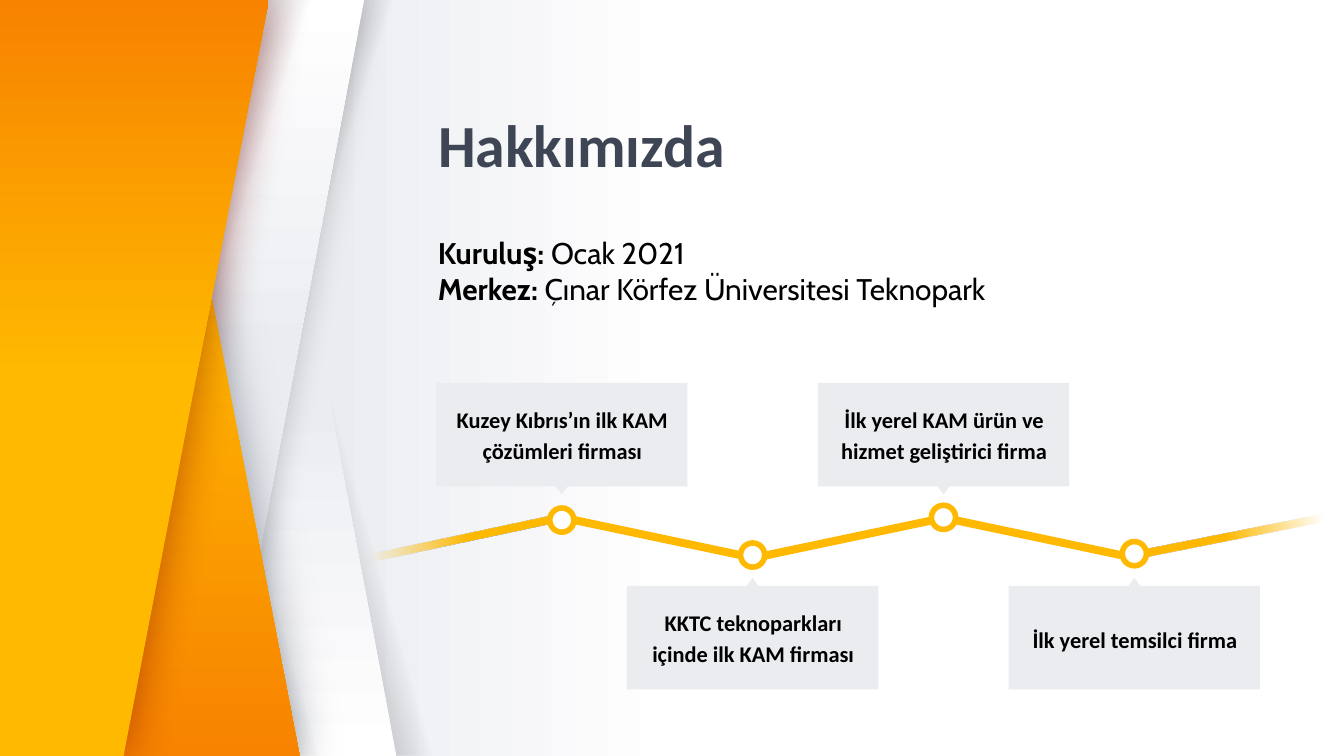
from lxml.etree import SubElement
from pptx import Presentation
from pptx.dml.color import RGBColor
from pptx.enum.shapes import MSO_SHAPE
from pptx.enum.text import MSO_ANCHOR, PP_ALIGN
from pptx.oxml.ns import qn
from pptx.util import Inches, Pt

WHITE = RGBColor(0xFF, 0xFF, 0xFF)
BLACK = RGBColor(0x00, 0x00, 0x00)
MIST = RGBColor(0xEA, 0xEC, 0xF0)
SLATE = RGBColor(0x3E, 0x46, 0x55)
CHARCOAL = RGBColor(0x27, 0x25, 0x2C)
MAROON = RGBColor(0x7E, 0x08, 0x08)
AMBER = RGBColor(0xFF, 0xB9, 0x00)
ORANGE = RGBColor(0xF7, 0x83, 0x00)

# Gradient stops: position in percent, colour, opacity in percent
SHADE = [(0, SLATE, 100), (13, SLATE, 100), (55, CHARCOAL, 0), (100, CHARCOAL, 0)]
PAPER = [(0, WHITE, 100), (47, MIST, 100), (100, MIST, 100)]
BACKDROP = [(0, WHITE, 100), (50, WHITE, 100), (76, MIST, 100), (100, MIST, 100)]
FADE_IN = [(0, AMBER, 0), (50, AMBER, 100), (100, AMBER, 100)]

CARD_WIDTH, CARD_HEIGHT = 1.87, 0.77
MARKER_SIZE = 0.18
MILESTONE_STEP = 1.42

# Text, marker centre below the timeline top, card above the line, text offset
MILESTONES = [
    ("Kuzey Kıbrıs’ın ilk KAM çözümleri firması", 1.02, True, 0.04),
    ("KKTC teknoparkları içinde ilk KAM firması", 1.28, False, 0.04),
    ("İlk yerel KAM ürün ve hizmet geliştirici firma", 1, True, 0.04),
    ("İlk yerel temsilci firma", 1.27, False, 0.17),
]
# Offset from the timeline left, rotation, whether the outer end fades
SEGMENTS = [(0, 348.1, True), (1.4, 11.9, False), (2.84, 348.1, False),
            (4.23, 11.9, False), (5.62, 168.9, True)]


def add_color(parent, color, opacity):
    element = SubElement(parent, qn("a:srgbClr"), val=str(color))
    if opacity < 100:
        SubElement(element, qn("a:alpha"), val=str(opacity * 1000))


def set_gradient(properties, stops, angle):
    """Replace the solid fill in a properties element by a linear gradient."""
    gradient = SubElement(properties, qn("a:gradFill"), rotWithShape="1")
    stop_list = SubElement(gradient, qn("a:gsLst"))
    for position, color, opacity in stops:
        stop = SubElement(stop_list, qn("a:gs"), pos=str(position * 1000))
        add_color(stop, color, opacity)
    SubElement(gradient, qn("a:lin"), ang=str(angle * 60000), scaled="0")
    properties.replace(properties.find(qn("a:solidFill")), gradient)


def set_shadow(shape, color, opacity, blur):
    effects = shape._element.spPr.find(qn("a:effectLst"))
    shadow = SubElement(effects, qn("a:outerShdw"), blurRad=str(Pt(blur)),
                        dist="0", dir="0", algn="ctr", rotWithShape="0")
    add_color(shadow, color, opacity)


def style_plain(shape, color):
    shape.shadow.inherit = False
    shape.fill.solid()
    shape.fill.fore_color.rgb = color
    shape.line.fill.background()


def add_plain_shape(slide, kind, left, top, width, height, color, adjustment=None):
    shape = slide.shapes.add_shape(
        kind, Inches(left), Inches(top), Inches(width), Inches(height))
    style_plain(shape, color)
    if adjustment is not None:
        shape.adjustments[0] = adjustment
    return shape


def add_text_box(slide, left, top, width, height, inset):
    frame = slide.shapes.add_textbox(
        Inches(left), Inches(top), Inches(width), Inches(height)).text_frame
    frame.word_wrap = True
    frame.margin_left = frame.margin_right = Inches(inset)
    frame.margin_top = frame.margin_bottom = Inches(inset)
    return frame


def add_run(paragraph, text, size, font, color, bold):
    run = paragraph.add_run()
    run.text = text
    run.font.size = Pt(size)
    run.font.name = font
    run.font.bold = bold
    run.font.color.rgb = color


def add_band(slide, left, height, slant, flipped, stops, angle):
    band = add_plain_shape(slide, MSO_SHAPE.PARALLELOGRAM, left, 0, 2.3, height, MIST, slant)
    if flipped:
        band._element.spPr.xfrm.set("flipH", "1")
    set_gradient(band._element.spPr, stops, angle)
    return band


def add_panel(slide, points, amber_end, angle, shadow_color):
    corners = [(Inches(x), Inches(y)) for x, y in points]
    builder = slide.shapes.build_freeform(*corners[0])
    builder.add_line_segments(corners[1:], close=True)
    panel = builder.convert_to_shape()
    style_plain(panel, AMBER)
    stops = [(0, AMBER, 100), (amber_end, AMBER, 100), (100, ORANGE, 100)]
    set_gradient(panel._element.spPr, stops, angle)
    set_shadow(panel, shadow_color, 50, 24.8)


def add_ribbons(slide, left, height):
    """Layer the folded paper and orange ribbons from back to front."""
    add_band(slide, left + 1.07, height, 0.753, True, SHADE, 196)
    add_band(slide, left + 0.65, height, 0.463, True, PAPER, 270)
    add_band(slide, left + 0.65, height, 0.753, False, SHADE, 18)
    front_paper = add_band(slide, left + 0.41, height, 0.463, False, PAPER, 90)
    set_shadow(front_paper, BLACK, 20, 16.9)
    add_band(slide, left + 0.22, height, 0.753, True, SHADE, 196)
    add_panel(slide, [(left, 0), (left, height), (left + 2.23, height), (left + 1.15, 0)],
              37, 90, SLATE)
    add_band(slide, left + 0.03, height, 0.753, False, SHADE, 18)
    add_panel(slide, [(left, height), (left, 0), (left + 2, 0), (left + 0.92, height)],
              50, 270, MAROON)


def add_heading(slide, left, top):
    title = add_text_box(slide, left, top, 2.46, 0.43, 0)
    title.vertical_anchor = MSO_ANCHOR.BOTTOM
    paragraph = title.paragraphs[0]
    paragraph.line_spacing = 0.9
    add_run(paragraph, "Hakkımızda", 32, "Calibri", SLATE, True)

    facts = add_text_box(slide, left - 0.1, top + 0.79, 5.29, 0.64, 0.1)
    facts.margin_top = facts.margin_bottom = Inches(0.05)
    paragraph = facts.paragraphs[0]
    add_run(paragraph, "Kuruluş:", 16, "Cabin", BLACK, True)
    add_run(paragraph, " Ocak 2021", 16, "Cabin", BLACK, False)
    paragraph.add_line_break()
    add_run(paragraph, "Merkez: ", 16, "Cabin", BLACK, True)
    add_run(paragraph, "Çınar Körfez Üniversitesi Teknopark", 16, "Cabin", BLACK, False)


def add_milestone(slide, center, top, text, marker_center, above, text_offset):
    card_left = center - CARD_WIDTH / 2
    card_top = top if above else top + 1.51
    add_plain_shape(slide, MSO_SHAPE.ROUNDED_RECTANGLE, card_left, card_top,
                    CARD_WIDTH, CARD_HEIGHT, MIST, 0)
    pointer_top = card_top + CARD_HEIGHT - 0.01 if above else card_top - 0.06
    pointer = add_plain_shape(slide, MSO_SHAPE.ISOSCELES_TRIANGLE, center - 0.05,
                              pointer_top, 0.1, 0.07, MIST)
    pointer.rotation = 180 if above else 0

    frame = add_text_box(slide, card_left + 0.05, card_top + text_offset, 1.78, 0.68, 0.1)
    paragraph = frame.paragraphs[0]
    paragraph.alignment = PP_ALIGN.CENTER
    paragraph.line_spacing = 1.15
    paragraph.space_after = Pt(16)
    add_run(paragraph, text, 12, "Calibri", BLACK, True)

    marker = add_plain_shape(slide, MSO_SHAPE.OVAL, center - MARKER_SIZE / 2,
                             top + marker_center - MARKER_SIZE / 2,
                             MARKER_SIZE, MARKER_SIZE, WHITE)
    marker.line.color.rgb = AMBER
    marker.line.width = Pt(3)


def add_timeline(slide, left, top):
    for offset, rotation, fades in SEGMENTS:
        segment = add_plain_shape(slide, MSO_SHAPE.ROUNDED_RECTANGLE, left + offset,
                                  top + 1.12, 1.48, 0.06, AMBER, 0 if fades else 0.5)
        segment.rotation = rotation
        if fades:
            set_gradient(segment._element.spPr, FADE_IN, 0)
    for index, milestone in enumerate(MILESTONES):
        add_milestone(slide, left + 1.43 + index * MILESTONE_STEP, top, *milestone)


def main():
    presentation = Presentation()
    presentation.slide_width = Inches(10)
    presentation.slide_height = Inches(5.625)
    slide = presentation.slides.add_slide(presentation.slide_layouts[6])
    slide.background.fill.solid()
    set_gradient(slide._element.find(".//" + qn("p:bgPr")), BACKDROP, 180)
    add_ribbons(slide, 0, 5.625)
    add_heading(slide, 3.26, 0.91)
    add_timeline(slide, 2.75, 2.85)
    presentation.save("out.pptx")


if __name__ == "__main__":
    main()
